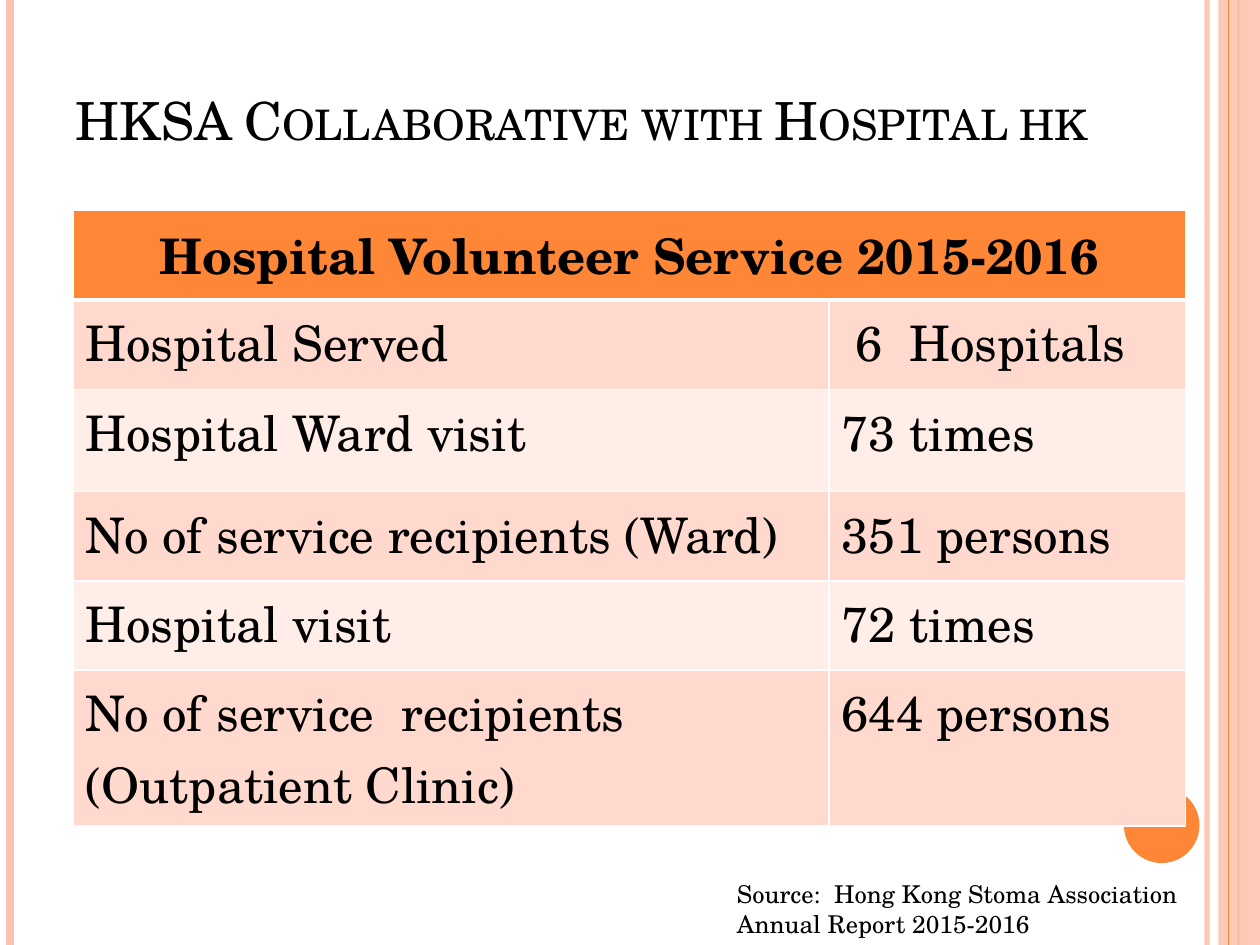
from dataclasses import dataclass

from lxml.etree import SubElement
from pptx import Presentation
from pptx.dml.color import RGBColor
from pptx.enum.shapes import MSO_CONNECTOR, MSO_SHAPE
from pptx.enum.text import MSO_ANCHOR, MSO_AUTO_SIZE, PP_ALIGN
from pptx.oxml.ns import qn
from pptx.util import Inches, Pt


@dataclass(frozen=True)
class Theme:
    font: str = "TeX Gyre Schola"
    text: str = "000000"
    accent: str = "FE8637"
    pale: str = "FEC3AE"
    border: str = "FFFFFF"
    bands: tuple = ("FFD9CE", "FFEDE8")
    title_size: int = 30
    table_size: int = 28
    source_size: int = 14


THEME = Theme()
SLIDE_HEIGHT = 7.5
COLUMN_WIDTHS = (6, 2.83)
ROW_HEIGHTS = (0.71, 0.71, 0.81, 0.71, 0.71, 1.15)
HEADING = "Hospital Volunteer Service 2015-2016"
SERVICES = (
    ("Hospital Served", " 6  Hospitals"),
    ("Hospital Ward visit", "73 times"),
    ("No of service recipients (Ward)", "351 persons"),
    ("Hospital visit", "72 times"),
    ("No of service  recipients (Outpatient Clinic)", "644 persons"),
)


def color(value):
    return RGBColor.from_string(value)


def set_opacity(shape, percent):
    for element in shape._element.spPr.iter(qn("a:srgbClr")):
        SubElement(element, qn("a:alpha"), val=str(percent * 1000))


def add_run(paragraph, text, size, bold=False):
    run = paragraph.add_run()
    run.text = text
    run.font.name = THEME.font
    run.font.size = Pt(size)
    run.font.bold = bold
    run.font.color.rgb = color(THEME.text)
    return run


def add_stripe(slide, x, line_color, width, opacity=100):
    """Draw a vertical line over the full height of the slide."""
    stripe = slide.shapes.add_connector(
        MSO_CONNECTOR.STRAIGHT, Inches(x), 0, Inches(x), Inches(SLIDE_HEIGHT))
    stripe.line.color.rgb = color(line_color)
    stripe.line.width = Pt(width)
    SubElement(stripe._element.spPr, qn("a:effectLst"))
    if opacity < 100:
        set_opacity(stripe, opacity)


def add_plain_shape(slide, kind, left, top, width, height, fill_color):
    shape = slide.shapes.add_shape(
        kind, Inches(left), Inches(top), Inches(width), Inches(height))
    shape.shadow.inherit = False
    shape.fill.solid()
    shape.fill.fore_color.rgb = color(fill_color)
    shape.line.fill.background()
    return shape


def add_decoration(slide):
    add_stripe(slide, 9.58, THEME.pale, 3, opacity=93)
    add_stripe(slide, 0.08, THEME.pale, 4.5)
    add_stripe(slide, 9.83, THEME.accent, 1.5)
    band = add_plain_shape(
        slide, MSO_SHAPE.RECTANGLE, 9.67, 0, 0.33, SLIDE_HEIGHT, THEME.pale)
    set_opacity(band, 87)
    add_stripe(slide, 9.75, THEME.accent, 0.75)
    add_plain_shape(slide, MSO_SHAPE.OVAL, 8.92, 6.25, 0.6, 0.6, THEME.accent)


def format_title(slide, text):
    title = slide.shapes.title
    title.left, title.top = Inches(0.5), Inches(0.17)
    title.width, title.height = Inches(8.83), Inches(1.08)
    frame = title.text_frame
    frame.word_wrap = True
    frame.auto_size = MSO_AUTO_SIZE.NONE
    frame.vertical_anchor = MSO_ANCHOR.BOTTOM
    paragraph = frame.paragraphs[0]
    paragraph.alignment = PP_ALIGN.LEFT
    run = add_run(paragraph, text, THEME.title_size)
    run._r.get_or_add_rPr().set("cap", "small")


def set_borders(cell, top, bottom):
    """Give the cell its borders; this must come before its fill."""
    properties = cell._tc.get_or_add_tcPr()
    for side, width in (("L", 1), ("R", 1), ("T", top), ("B", bottom)):
        line = SubElement(properties, qn(f"a:ln{side}"), w=str(Pt(width)))
        fill = SubElement(line, qn("a:solidFill"))
        SubElement(fill, qn("a:srgbClr"), val=THEME.border)


def format_cell(cell, row_index):
    set_borders(cell, top=3 if row_index == 1 else 1,
                bottom=3 if row_index == 0 else 1)
    cell.fill.solid()
    cell.fill.fore_color.rgb = color(
        THEME.bands[(row_index - 1) % 2] if row_index else THEME.accent)


def write_cell(cell, text, alignment=PP_ALIGN.LEFT, bold=False):
    paragraph = cell.text_frame.paragraphs[0]
    paragraph.alignment = alignment
    add_run(paragraph, text, THEME.table_size, bold)


def add_service_table(slide):
    table = slide.shapes.add_table(
        len(ROW_HEIGHTS), len(COLUMN_WIDTHS), Inches(0.58), Inches(1.67),
        Inches(sum(COLUMN_WIDTHS)), Inches(sum(ROW_HEIGHTS))).table
    for column, width in zip(table.columns, COLUMN_WIDTHS):
        column.width = Inches(width)
    for row_index, (row, height) in enumerate(zip(table.rows, ROW_HEIGHTS)):
        row.height = Inches(height)
        for cell in row.cells:
            format_cell(cell, row_index)
    heading = table.cell(0, 0)
    heading.merge(table.cell(0, 1))
    write_cell(heading, HEADING, PP_ALIGN.CENTER, bold=True)
    for row_index, texts in enumerate(SERVICES, start=1):
        for column_index, text in enumerate(texts):
            write_cell(table.cell(row_index, column_index), text)


def add_source_note(slide, text):
    box = slide.shapes.add_textbox(
        Inches(5.75), Inches(6.93), Inches(3.95), Inches(0.57))
    frame = box.text_frame
    frame.word_wrap = True
    frame.auto_size = MSO_AUTO_SIZE.SHAPE_TO_FIT_TEXT
    add_run(frame.paragraphs[0], text, THEME.source_size)


def main():
    presentation = Presentation()
    presentation.slide_width = Inches(10)
    presentation.slide_height = Inches(SLIDE_HEIGHT)
    slide = presentation.slides.add_slide(presentation.slide_layouts[5])
    add_decoration(slide)
    format_title(slide, "HKSA Collaborative with Hospital hk")
    add_service_table(slide)
    add_source_note(
        slide, "Source:  Hong Kong Stoma Association  Annual Report 2015-2016")
    presentation.save("out.pptx")


if __name__ == "__main__":
    main()
